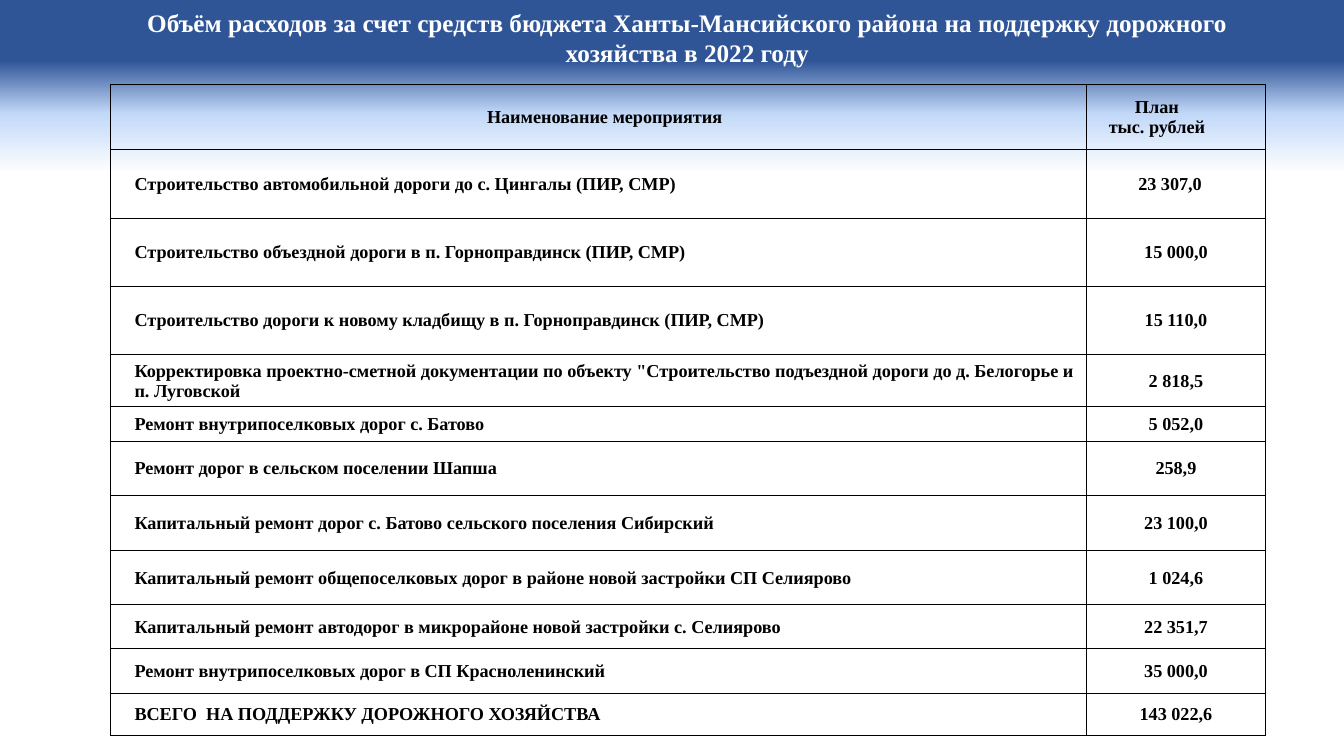
"""Build a slide with the 2022 road support budget table."""
from copy import deepcopy
from lxml.etree import SubElement
from pptx import Presentation
from pptx.dml.color import RGBColor
from pptx.enum.text import MSO_ANCHOR, PP_ALIGN
from pptx.oxml import parse_xml
from pptx.oxml.ns import nsdecls
from pptx.util import Cm, Pt

BLUE = RGBColor(0x2F, 0x55, 0x97)
PALE = RGBColor(0xC2, 0xD8, 0xF8)
WHITE = RGBColor(0xFF, 0xFF, 0xFF)
BLACK = RGBColor(0, 0, 0)
FACE = "Times New Roman"
ROWS = [
    ("Наименование мероприятия", "План\nтыс. рублей", 1.64),
    ("Строительство автомобильной дороги до с. Цингалы (ПИР, СМР)", "23 307,0", 1.73),
    ("Строительство объездной дороги в п. Горноправдинск (ПИР, СМР)", "15 000,0", 1.72),
    ("Строительство дороги к новому кладбищу в п. Горноправдинск (ПИР, СМР)", "15 110,0", 1.72),
    ('Корректировка проектно-сметной документации по объекту "Строительство '
     "подъездной дороги до д. Белогорье и п. Луговской", "2 818,5", 1.31),
    ("Ремонт внутрипоселковых дорог с. Батово", "5 052,0", 0.88),
    ("Ремонт дорог в сельском поселении Шапша", "258,9", 1.36),
    ("Капитальный ремонт дорог с. Батово сельского поселения Сибирский", "23 100,0", 1.38),
    ("Капитальный ремонт общепоселковых дорог в районе новой застройки СП Селиярово",
     "1 024,6", 1.38),
    ("Капитальный ремонт автодорог в микрорайоне новой застройки с. Селиярово",
     "22 351,7", 1.11),
    ("Ремонт внутрипоселковых дорог в СП Красноленинский", "35 000,0", 1.11),
    ("ВСЕГО  НА ПОДДЕРЖКУ ДОРОЖНОГО ХОЗЯЙСТВА", "143 022,6", 1.06),
]
WIDTHS = [24.59, 4.51]
INSETS = {0: 0.99, 1: 0.33}


def style(para, size, color, align):
    para.alignment = align
    para.font.name = FACE
    para.font.size = Pt(size)
    para.font.bold = True
    para.font.color.rgb = color


def border(cell):
    props = cell._tc.get_or_add_tcPr()
    for spot, side in enumerate("LRTB"):
        props.insert(spot, parse_xml(
            f'<a:ln{side} {nsdecls("a")} w="{Pt(0.5)}"><a:solidFill>'
            f'<a:srgbClr val="{BLACK}"/></a:solidFill></a:ln{side}>'))


deck = Presentation()
deck.slide_width = Cm(33.87)
deck.slide_height = Cm(19.05)
slide = deck.slides.add_slide(deck.slide_layouts[6])

fill = slide.background.fill
fill.gradient()
fill.gradient_angle = 270
stops = slide._element.xpath(".//a:gsLst")[0]
stops.append(deepcopy(stops[-1]))
shades = [(0.08, BLUE), (0.15, PALE), (0.23, WHITE)]
for stop, (place, color) in zip(fill.gradient_stops, shades):
    stop.position = place
    stop.color.rgb = color

table = slide.shapes.add_table(
    len(ROWS), 2, Cm(2.79), Cm(2.12), Cm(sum(WIDTHS)),
    Cm(sum(row[2] for row in ROWS))).table
table.first_row = False
table.horz_banding = False
for column, width in zip(table.columns, WIDTHS):
    column.width = Cm(width)
for r, (name, value, height) in enumerate(ROWS):
    table.rows[r].height = Cm(height)
    for c, text in enumerate((name, value)):
        cell = table.cell(r, c)
        cell.text = text
        cell.vertical_anchor = MSO_ANCHOR.MIDDLE
        cell.margin_left = Cm(0.03 if c else 0.6)
        cell.margin_right = Cm(INSETS.get(r, 0.03) if c else 0.3)
        cell.margin_top = Cm(0.03)
        cell.margin_bottom = 0
        cell.fill.background()
        border(cell)
        align = PP_ALIGN.CENTER if c or r == 0 else PP_ALIGN.LEFT
        for para in cell.text_frame.paragraphs:
            style(para, 13, BLACK, align)

title = slide.shapes.add_textbox(Cm(2.92), 0, Cm(28.8), Cm(1.9)).text_frame
title.word_wrap = True
title.vertical_anchor = MSO_ANCHOR.MIDDLE
title.text = ("Объём расходов за счет средств бюджета Ханты-Мансийского района "
              "на поддержку дорожного хозяйства в 2022 году")
style(title.paragraphs[0], 18, WHITE, PP_ALIGN.CENTER)

deck.save("out.pptx")
